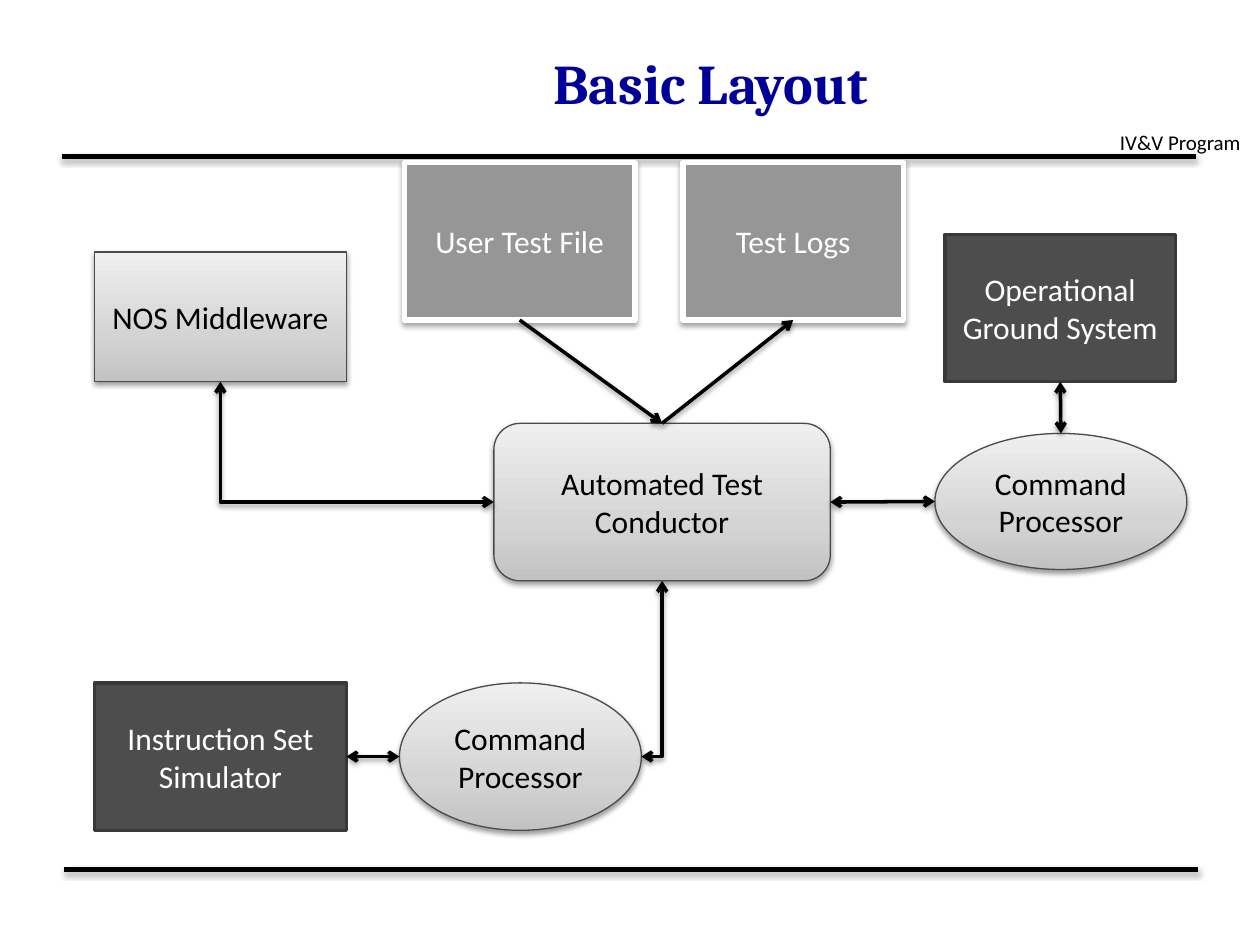
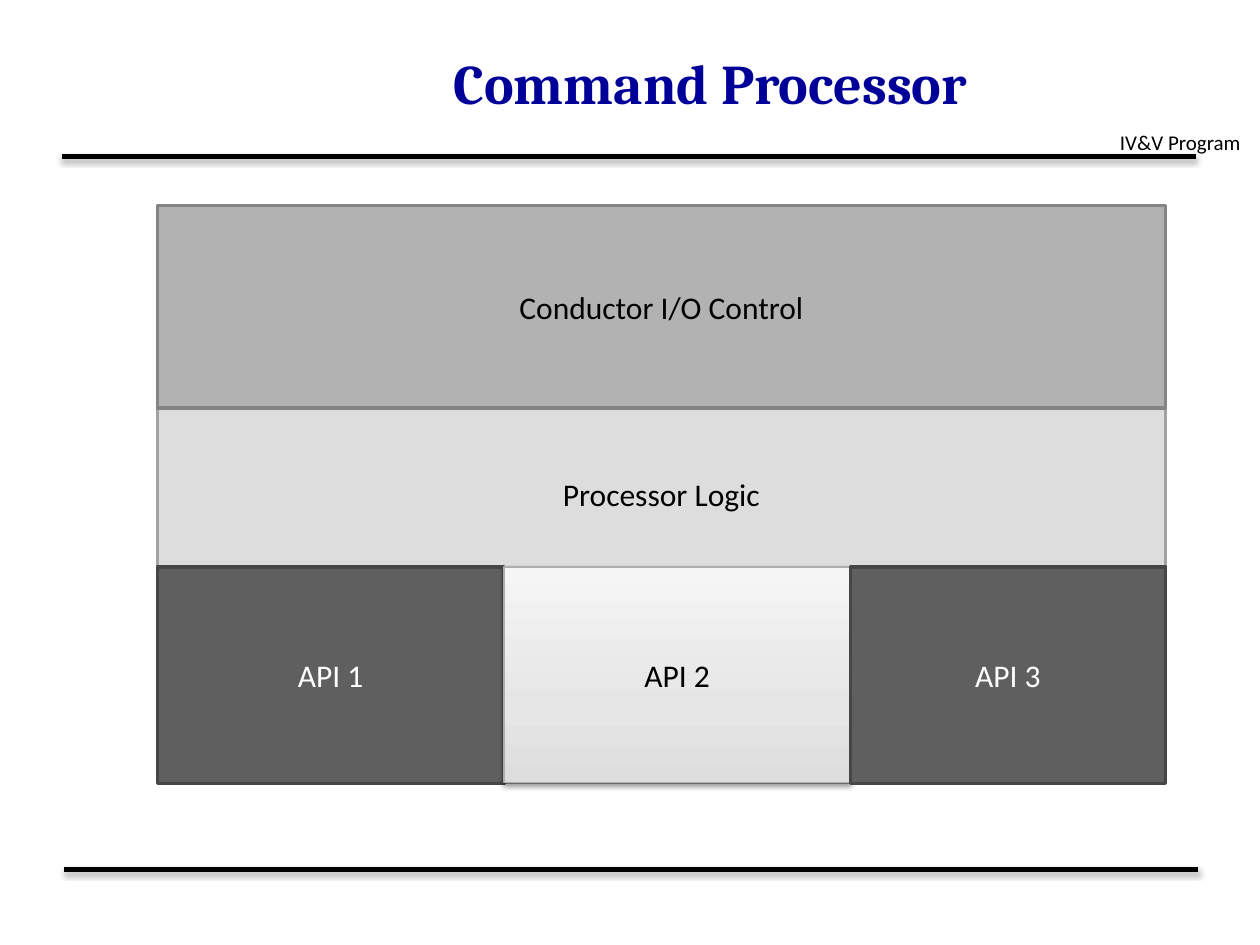
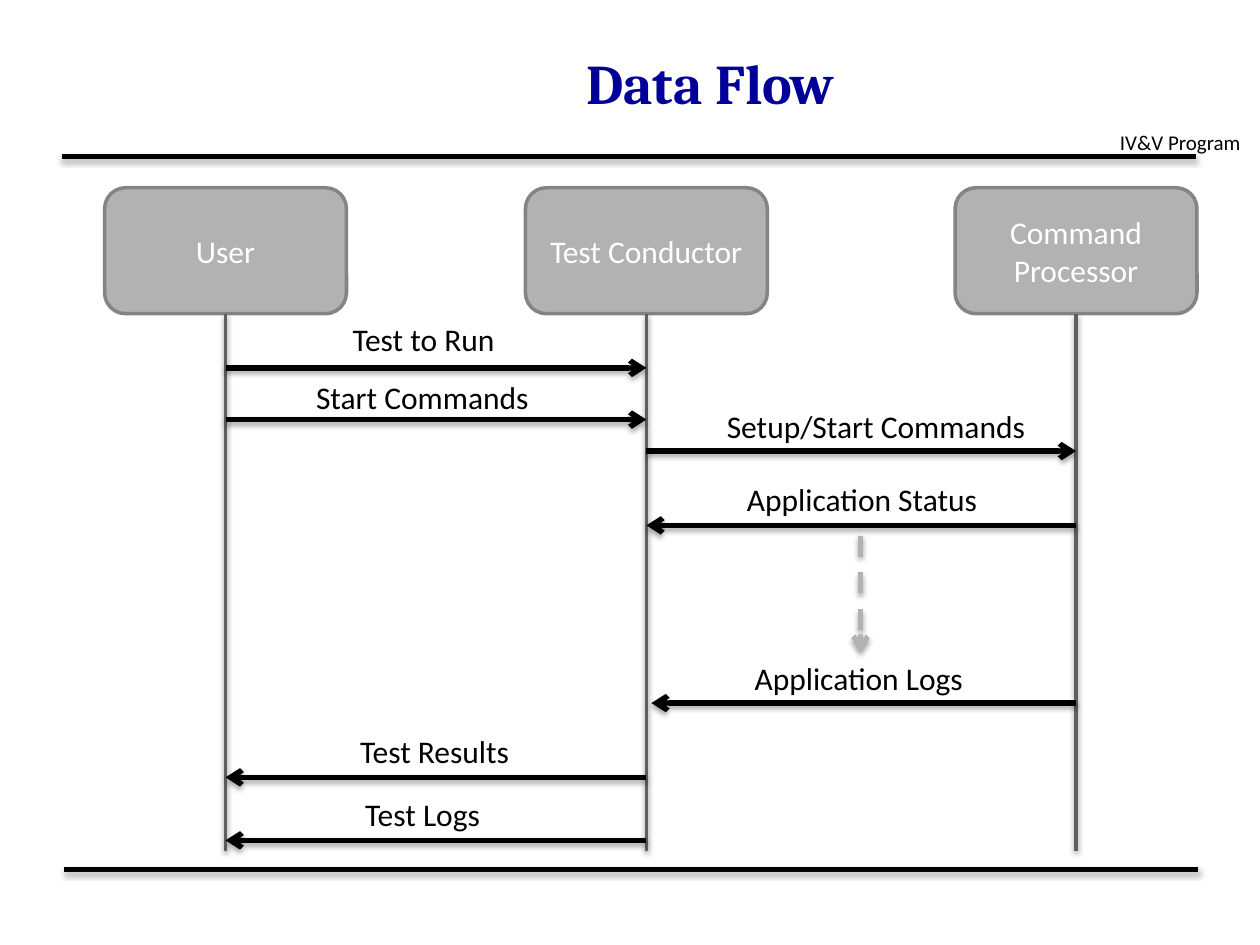
"""Build three slides on an automated test conductor: layout, command processor and data flow."""
import copy

import pptx
import pptx.dml.color
import pptx.enum.dml
import pptx.enum.shapes
import pptx.enum.text
import pptx.oxml
import pptx.oxml.ns
import pptx.util

Inches = pptx.util.Inches
Pt = pptx.util.Pt
RGB = pptx.dml.color.RGBColor.from_string
qn = pptx.oxml.ns.qn
SHAPE = pptx.enum.shapes.MSO_SHAPE
CONNECTOR = pptx.enum.shapes.MSO_CONNECTOR
ALIGN = pptx.enum.text.PP_ALIGN
FIT = pptx.enum.text.MSO_AUTO_SIZE
MIDDLE = pptx.enum.text.MSO_ANCHOR.MIDDLE

COLORS = {
    "title": "000099", "black": "000000", "white": "FFFFFF",
    "dark": "4D4D4D", "dark edge": "393939", "file": "969696",
    "api": "5F5F5F", "api edge": "464646", "gray": "B2B2B2", "gray edge": "848484",
    "logic": "DDDDDD", "logic edge": "A3A3A3", "steel edge": "4B4B4B", "pale edge": "AEAEAE",
}
GRADIENTS = {
    "steel": ("C2C2C2", "D4D4D4", "EFEFEF"),
    "pale": ("DDDDDD", "E6E6E6", "F5F5F5"),
}
STYLES = {
    "steel": ("steel", "steel edge", 0.75, "black", True),
    "pale": ("pale", "pale edge", 0.75, "black", True),
    "dark": ("dark", "dark edge", 2, "white", False),
    "file": ("file", "white", 3, "white", True),
    "api": ("api", "api edge", 2, "white", False),
    "control": ("gray", "gray edge", 2, "black", False),
    "actor": ("gray", "gray edge", 2, "white", False),
    "logic": ("logic", "logic edge", 2, "black", False),
}
SIDES = {0: (0.5, 0), 1: (0, 0.5), 2: (0.5, 1), 3: (1, 0.5)}


def write(box, text, style=None, size=18, font="Calibri", color="black", bold=False,
          align=ALIGN.CENTER, wrap=True, fit=FIT.NONE):
    """Put text in a box; a style name also sets the fill, edge and shadow."""
    if style:
        fill, edge, width, color, shadow = STYLES[style]
        if fill in GRADIENTS:
            box.fill.gradient()
            box.fill.gradient_angle = 90
            stops = box.element.spPr.find(".//" + qn("a:gsLst"))
            stops.insert(1, copy.deepcopy(stops[0]))
            for stop, position, shade in zip(box.fill.gradient_stops, (0, 0.35, 1), GRADIENTS[fill]):
                stop.position = position
                stop.color.rgb = RGB(shade)
        else:
            box.fill.solid()
            box.fill.fore_color.rgb = RGB(COLORS[fill])
        outline(box, edge, width, shadow=shadow)
    frame = box.text_frame
    frame.word_wrap = wrap
    frame.auto_size = fit
    para = frame.paragraphs[0]
    para.alignment = align
    span = para.add_run()
    span.text = text
    span.font.size = Pt(size)
    span.font.name = font
    span.font.bold = bold
    span.font.color.rgb = RGB(COLORS[color])


def outline(item, color="black", width=3, shadow=True, ends=(), dash=None):
    """Set the line, arrowheads and shadow of a shape or connector."""
    item.line.color.rgb = RGB(COLORS[color])
    item.line.width = Pt(width)
    if dash:
        item.line.dash_style = dash
    properties = item.element.spPr
    for end in ends:
        arrow = pptx.oxml.parse_xml(f'<a:{end} {pptx.oxml.ns.nsdecls("a")} type="arrow"/>')
        properties.find(qn("a:ln")).append(arrow)
    alpha, distance = (35000, 1.8) if width == 3 else (38000, 1.6)
    drop = (f'<a:outerShdw blurRad="{Pt(3.1)}" dist="{Pt(distance)}" dir="5400000" rotWithShape="0">'
            f'<a:srgbClr val="{COLORS["black"]}"><a:alpha val="{alpha}"/></a:srgbClr></a:outerShdw>')
    properties.append(pptx.oxml.parse_xml(
        f'<a:effectLst {pptx.oxml.ns.nsdecls("a")}>{drop if shadow else ""}</a:effectLst>'))


deck = pptx.Presentation()
deck.slide_width, deck.slide_height = Inches(10), Inches(7.5)
layout = deck.slide_layouts[5]
for holder in list(layout.placeholders)[1:]:
    layout.shapes.element.remove(holder.element)

pages = []
for title in ("Basic Layout", "Command Processor", "Data Flow"):
    page = deck.slides.add_slide(layout)
    heading = page.shapes.title
    heading.left, heading.top = Inches(2.53), Inches(0.25)
    heading.width, heading.height = Inches(6.22), Inches(0.81)
    heading.text_frame.vertical_anchor = MIDDLE
    write(heading, title, size=32, font="Cambria", color="title", bold=True)
    pages.append(page)
layout_page, processor_page, flow_page = pages

program = layout_page.shapes.add_textbox(Inches(8.79), Inches(0.98), Inches(1.21), Inches(0.3))
write(program, "IV&V Program", size=12, align=ALIGN.LEFT, fit=FIT.SHAPE_TO_FIT_TEXT)
layout.shapes.element.append(program.element)
for left, top in ((0.51, 6.9), (0.49, 1.24)):
    rule = layout_page.shapes.add_connector(
        CONNECTOR.STRAIGHT, Inches(left), Inches(top), Inches(left + 9), Inches(top))
    outline(rule)
    layout.shapes.element.append(rule.element)

boxes = {}
for name, text, kind, style, *place in (
    ("conductor", "Automated Test Conductor", SHAPE.ROUNDED_RECTANGLE, "steel", 3.92, 3.36, 2.67, 1.25),
    ("ground", "Operational Ground System", SHAPE.RECTANGLE, "dark", 7.5, 1.86, 1.83, 1.17),
    ("simulator", "Instruction Set Simulator", SHAPE.RECTANGLE, "dark", 0.75, 5.42, 2, 1.17),
    ("ground processor", "Command Processor", SHAPE.OVAL, "steel", 7.42, 3.44, 2, 1.08),
    ("simulator processor", "Command Processor", SHAPE.OVAL, "steel", 3.17, 5.42, 1.92, 1.17),
    ("middleware", "NOS Middleware", SHAPE.RECTANGLE, "steel", 0.75, 2, 2, 1.03),
    ("test file", "User Test File", SHAPE.RECTANGLE, "file", 3.21, 1.29, 1.83, 1.25),
    ("logs", "Test Logs", SHAPE.RECTANGLE, "file", 5.42, 1.29, 1.75, 1.25),
):
    boxes[name] = layout_page.shapes.add_shape(kind, *map(Inches, place))
    write(boxes[name], text, style)

both, forward = ("headEnd", "tailEnd"), ("tailEnd",)
for start, start_side, goal, goal_side, kind, ends in (
    ("simulator processor", 1, "simulator", 3, CONNECTOR.STRAIGHT, both),
    ("conductor", 3, "ground processor", 1, CONNECTOR.STRAIGHT, both),
    ("ground processor", 0, "ground", 2, CONNECTOR.STRAIGHT, both),
    ("simulator processor", 3, "conductor", 2, CONNECTOR.ELBOW, both),
    ("conductor", 1, "middleware", 2, CONNECTOR.ELBOW, both),
    ("test file", 2, "conductor", 0, CONNECTOR.STRAIGHT, forward),
    ("conductor", 0, "logs", 2, CONNECTOR.STRAIGHT, forward),
):
    points = []
    for name, side in ((start, start_side), (goal, goal_side)):
        box, (across, down) = boxes[name], SIDES[side]
        points += [int(box.left + box.width * across), int(box.top + box.height * down)]
    link = layout_page.shapes.add_connector(kind, *points)
    if kind == CONNECTOR.ELBOW:
        link.element.spPr.find(qn("a:prstGeom")).set("prst", "bentConnector2")
    else:
        if boxes[start].auto_shape_type != SHAPE.OVAL:
            link.begin_connect(boxes[start], start_side)
        if boxes[goal].auto_shape_type != SHAPE.OVAL:
            link.end_connect(boxes[goal], goal_side)
    outline(link, width=2, ends=ends)

for text, style, *place in (
    ("Processor Logic", "logic", 1.25, 1.63, 8, 4.58),
    ("API 1", "api", 1.25, 4.5, 2.75, 1.72),
    ("API 2", "pale", 4, 4.5, 2.75, 1.71),
    ("Conductor I/O Control", "control", 1.25, 1.63, 8, 1.61),
    ("API 3", "api", 6.75, 4.5, 2.5, 1.72),
):
    layer = processor_page.shapes.add_shape(SHAPE.RECTANGLE, *map(Inches, place))
    write(layer, text, style)

user, conductor, processor = 1.79, 5.13, 8.54
for text, center in (("User", user), ("Test Conductor", conductor), ("Command Processor", processor)):
    actor = flow_page.shapes.add_shape(
        SHAPE.ROUNDED_RECTANGLE, Inches(center - 0.96), Inches(1.49), Inches(1.92), Inches(1))
    write(actor, text, "actor")
    lifeline = flow_page.shapes.add_connector(
        CONNECTOR.STRAIGHT, Inches(center), Inches(2.49), Inches(center), Inches(6.75))
    lifeline.begin_connect(actor, 2)
    outline(lifeline, "api", 2)

for text, start, goal, level, left, top, width in (
    ("Test to Run", user, conductor, 2.92, 2.7, 2.49, 1.34),
    ("Start Commands", user, conductor, 3.33, 2.41, 2.95, 1.91),
    ("Setup/Start Commands", conductor, processor, 3.58, 5.67, 3.18, 2.6),
    ("Application Status", processor, conductor, 4.17, 5.83, 3.76, 2.05),
    ("Application Logs", processor, conductor + 0.04, 5.58, 5.89, 5.18, 1.88),
    ("Test Results", conductor, user, 6.17, 2.76, 5.76, 1.4),
    ("Test Logs", conductor, user, 6.67, 2.8, 6.26, 1.12),
):
    message = flow_page.shapes.add_connector(
        CONNECTOR.STRAIGHT, Inches(start), Inches(level), Inches(goal), Inches(level))
    outline(message, ends=forward)
    label = flow_page.shapes.add_textbox(Inches(left), Inches(top), Inches(width), Inches(0.4))
    write(label, text, align=ALIGN.LEFT, wrap=False, fit=FIT.SHAPE_TO_FIT_TEXT)

wait = flow_page.shapes.add_connector(
    CONNECTOR.STRAIGHT, Inches(6.83), Inches(4.25), Inches(6.83), Inches(5.18))
outline(wait, "gray", ends=forward, dash=pptx.enum.dml.MSO_LINE.DASH)

deck.save("out.pptx")
